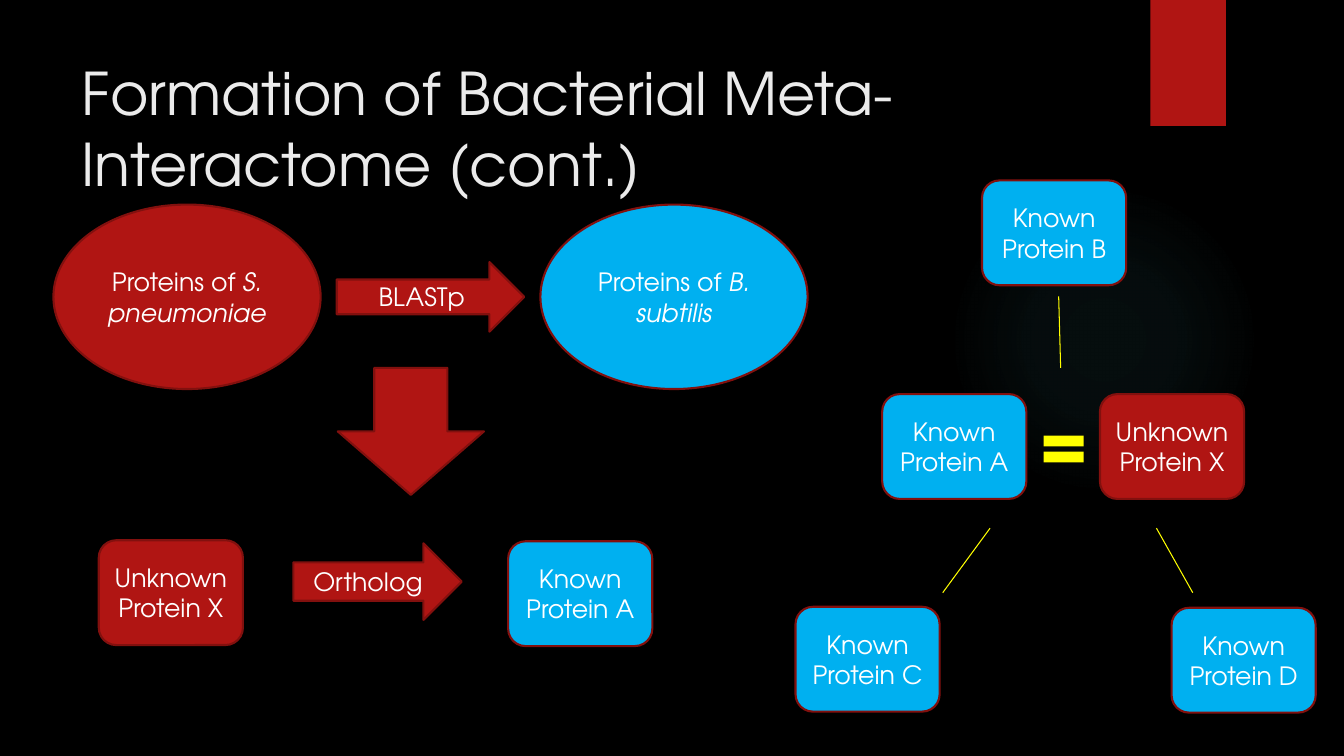
from lxml import etree
from pptx import Presentation
from pptx.dml.color import RGBColor
from pptx.enum.shapes import MSO_CONNECTOR, MSO_SHAPE
from pptx.enum.text import MSO_ANCHOR, PP_ALIGN
from pptx.oxml import parse_xml
from pptx.oxml.ns import nsdecls, qn
from pptx.util import Inches, Pt

FONT = "TeX Gyre Adventor"
RED, BLUE, YELLOW = "B01513", "00B0F0", "FFFF00"
OUTLINE, GLOW = "82100E", "50B9C1"
PROTEIN_SIZE = (1.43, 1.04)
SPECIES_SIZE = (2.65, 1.83)


def color(value):
    return RGBColor.from_string(value)


def write_text(frame, text, italic_text="", size=18, text_color="FFFFFF",
               align=PP_ALIGN.CENTER, anchor=MSO_ANCHOR.MIDDLE):
    frame.word_wrap = True
    frame.vertical_anchor = anchor
    paragraph = frame.paragraphs[0]
    paragraph.alignment = align
    for part, italic in ((text, False), (italic_text, True)):
        if part:
            run = paragraph.add_run()
            run.text = part
            run.font.name = FONT
            run.font.size = Pt(size)
            run.font.italic = italic
            run.font.color.rgb = color(text_color)


def add_shape(slide, kind, left, top, size, fill, outline=OUTLINE):
    shape = slide.shapes.add_shape(
        kind, Inches(left), Inches(top), Inches(size[0]), Inches(size[1]))
    shape.shadow.inherit = False
    shape.fill.solid()
    shape.fill.fore_color.rgb = color(fill)
    if outline:
        shape.line.color.rgb = color(outline)
        shape.line.width = Pt(1.5)
    else:
        shape.line.fill.background()
    return shape


def add_glow(slide, left, top, diameter):
    shape = add_shape(slide, MSO_SHAPE.OVAL, left, top, (diameter, diameter), GLOW, None)
    stops = "".join(
        f'<a:gs pos="{position * 1000}"><a:srgbClr val="{GLOW}">'
        f'<a:alpha val="{opacity * 1000}"/></a:srgbClr></a:gs>'
        for position, opacity in ((0, 7), (36, 6), (69, 0), (100, 0)))
    gradient = parse_xml(
        f'<a:gradFill {nsdecls("a")} rotWithShape="1"><a:gsLst>{stops}</a:gsLst>'
        '<a:path path="circle"><a:fillToRect l="50000" t="50000" r="50000" b="50000"/>'
        '</a:path></a:gradFill>')
    properties = shape.element.spPr
    properties.replace(properties.find(qn("a:solidFill")), gradient)


def add_link(slide, start, end):
    link = slide.shapes.add_connector(
        MSO_CONNECTOR.STRAIGHT, *(Inches(value) for value in start + end))
    link.line.color.rgb = color(YELLOW)
    link.line.width = Pt(0.75)
    etree.SubElement(link.element.spPr, qn("a:effectLst"))


def add_title(slide, text):
    box = slide.shapes.add_textbox(Inches(0.71), Inches(0.5), Inches(10.29), Inches(1.53))
    write_text(box.text_frame, text, size=42, text_color="EBEBEB", align=PP_ALIGN.LEFT)


def add_species(slide, left, name, fill):
    shape = add_shape(slide, MSO_SHAPE.OVAL, left, 2.03, SPECIES_SIZE, fill)
    write_text(shape.text_frame, "Proteins of ", name)


def add_protein(slide, left, top, name, fill=BLUE):
    shape = add_shape(slide, MSO_SHAPE.ROUNDED_RECTANGLE, left, top, PROTEIN_SIZE, fill)
    write_text(shape.text_frame, name)


def add_step_arrow(slide, left, top, size, label):
    shape = add_shape(slide, MSO_SHAPE.RIGHT_ARROW, left, top, size, RED)
    write_text(shape.text_frame, label)


def main():
    presentation = Presentation()
    presentation.slide_width = Inches(13.33)
    presentation.slide_height = Inches(7.5)
    slide = presentation.slides.add_slide(presentation.slide_layouts[6])

    # Backdrop
    slide.background.fill.solid()
    slide.background.fill.fore_color.rgb = color("000000")
    add_glow(slide, 9.41, 1.83, 3.08)
    add_shape(slide, MSO_SHAPE.RECTANGLE, 11.41, 0, (0.75, 1.25), RED, None)
    add_title(slide, "Formation of Bacterial Meta-Interactome (cont.)")

    # Comparison of the two species
    add_species(slide, 0.53, "S. pneumoniae", RED)
    add_species(slide, 5.36, "B. subtilis", BLUE)
    add_step_arrow(slide, 3.34, 2.6, (1.86, 0.69), "BLASTp")
    add_shape(slide, MSO_SHAPE.DOWN_ARROW, 3.35, 3.65, (1.45, 1.26), RED)

    # Resulting ortholog pair
    add_protein(slide, 0.98, 5.36, "Unknown Protein X", RED)
    add_step_arrow(slide, 2.91, 5.39, (1.67, 0.76), "Ortholog")
    add_protein(slide, 5.04, 5.37, "Known Protein A")

    # Interaction network
    for start, end in (((10.52, 3.65), (10.5, 2.94)),
                       ((9.82, 5.24), (9.35, 5.88)),
                       ((11.83, 5.88), (11.47, 5.24))):
        add_link(slide, start, end)
    for letter, left, top in (("A", 8.75, 3.91), ("B", 9.74, 1.79),
                              ("C", 7.89, 6.02), ("D", 11.62, 6.03)):
        add_protein(slide, left, top, f"Known Protein {letter}")
    add_protein(slide, 10.91, 3.91, "Unknown Protein X", RED)
    add_shape(slide, MSO_SHAPE.MATH_EQUAL, 10.28, 4.23, (0.54, 0.45), YELLOW, None)

    presentation.save("out.pptx")


if __name__ == "__main__":
    main()
